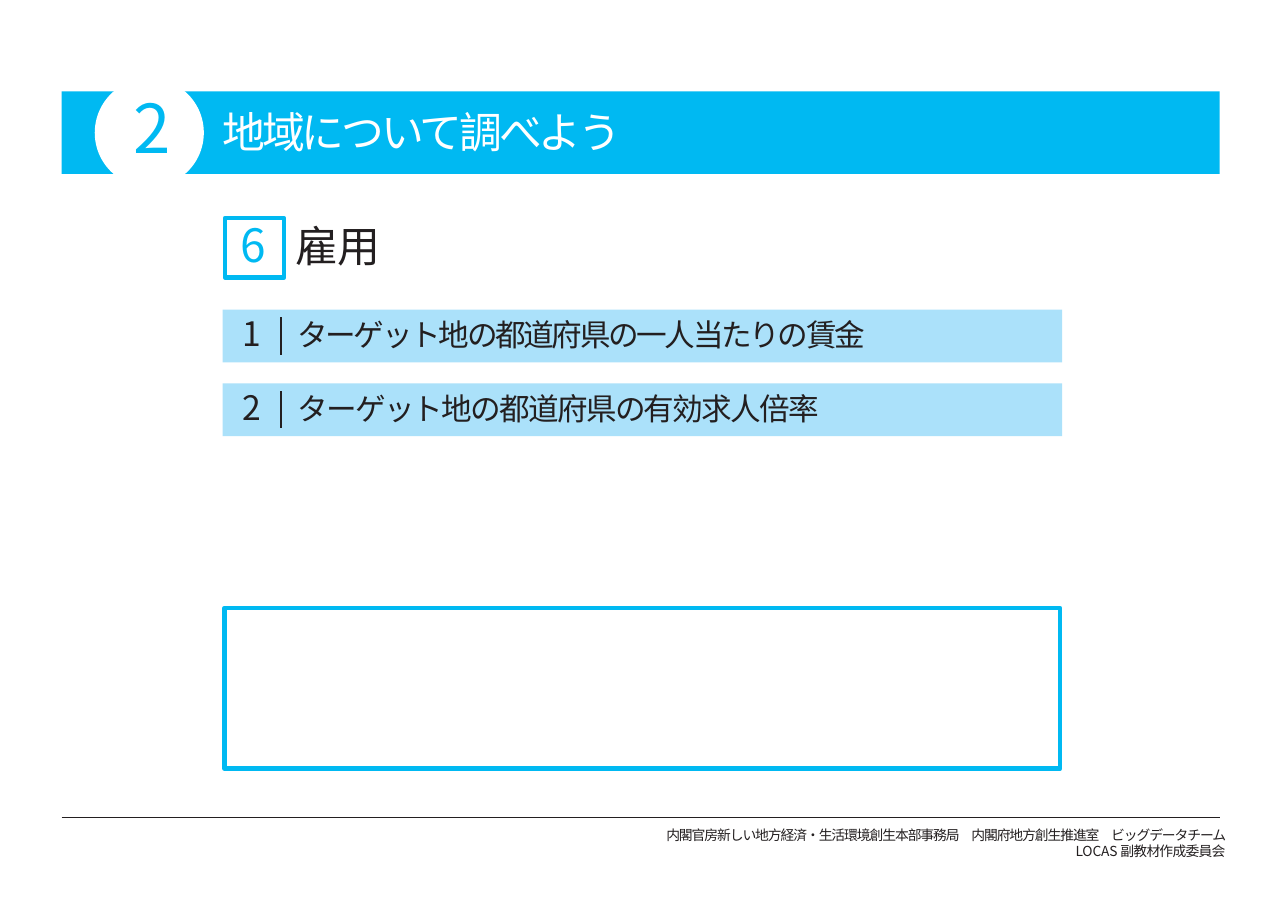
from dataclasses import dataclass

from lxml.etree import SubElement
from pptx import Presentation
from pptx.dml.color import RGBColor
from pptx.enum.shapes import MSO_CONNECTOR, MSO_SHAPE
from pptx.enum.text import MSO_ANCHOR, PP_ALIGN
from pptx.oxml.ns import qn
from pptx.util import Inches, Pt


@dataclass(frozen=True)
class Theme:
    """Colours, typeface and type sizes of the slide."""
    accent: str = "00B9F2"
    pale: str = "ABE1FA"
    ink: str = "231F20"
    white: str = "FFFFFF"
    typeface: str = "Noto Sans CJK JP"
    chapter: float = 44
    badge: float = 30
    heading: float = 28
    item_number: float = 22
    item: float = 20
    credit: float = 9


THEME = Theme()


def add_block(slide, kind, box, fill=None, line=None, width=0):
    """Add a preset shape with an optional fill and outline."""
    shape = slide.shapes.add_shape(kind, *map(Inches, box))
    shape.shadow.inherit = False
    if fill:
        shape.fill.solid()
        shape.fill.fore_color.rgb = RGBColor.from_string(fill)
    else:
        shape.fill.background()
    if line:
        shape.line.color.rgb = RGBColor.from_string(line)
        shape.line.width = Pt(width)
    else:
        shape.line.fill.background()
    return shape


def add_rule(slide, start, end, width):
    """Add a thin straight line in the ink colour."""
    rule = slide.shapes.add_connector(MSO_CONNECTOR.STRAIGHT, *map(Inches, start + end))
    rule.line.color.rgb = RGBColor.from_string(THEME.ink)
    rule.line.width = Pt(width)
    SubElement(rule._element.spPr, qn("a:effectLst"))


def prepare_frame(shape, top=0):
    """Set wrapping, margins and top anchoring of a shape's text."""
    frame = shape.text_frame
    frame.word_wrap = True
    frame.vertical_anchor = MSO_ANCHOR.TOP
    frame.margin_left = frame.margin_right = frame.margin_bottom = 0
    frame.margin_top = Inches(top)
    return frame


def add_text_box(slide, box, top=0):
    """Add a text box and return its text frame."""
    return prepare_frame(slide.shapes.add_textbox(*map(Inches, box)), top)


def write(paragraph, runs, indent=0.01, before=0, leading=None, tab=None, align=PP_ALIGN.LEFT):
    """Fill a paragraph with runs given as text, size, colour and tracking."""
    paragraph.alignment = align
    paragraph.space_before = Pt(before)
    if leading:
        paragraph.line_spacing = Pt(leading)
    properties = paragraph._p.get_or_add_pPr()
    properties.set("marL", str(Inches(indent)))
    properties.set("indent", "0")
    if tab:
        tabs = SubElement(properties, qn("a:tabLst"))
        SubElement(tabs, qn("a:tab"), pos=str(Inches(tab)), algn="l")
    paragraph.font.name = THEME.typeface
    for text, size, colour, tracking in runs:
        run = paragraph.add_run()
        run.text = text
        run.font.size = Pt(size)
        run.font.color.rgb = RGBColor.from_string(colour)
        character = run._r.get_or_add_rPr()
        character.set("spc", str(round(tracking * 100)))
        SubElement(character, qn("a:ea"), typeface=THEME.typeface)


def add_chapter_banner(slide, box, number, title):
    """Draw the banner with its numbered circle and chapter title."""
    left, top, _, _ = box
    add_block(slide, MSO_SHAPE.RECTANGLE, box, fill=THEME.accent)
    add_block(slide, MSO_SHAPE.OVAL, (left + 0.3, top - 0.12, 0.99, 0.99), fill=THEME.white)
    frame = add_text_box(slide, (left + 0.62, top - 0.06, 0.39, 0.8), 0.01)
    write(frame.paragraphs[0], [(number, THEME.chapter, THEME.accent, 0)], 0.03, 1)
    frame = add_text_box(slide, (left + 1.45, top + 0.12, 3.7, 0.49), 0.01)
    write(frame.paragraphs[0], [(title, THEME.heading, THEME.white, -2)], before=1)


def add_section_heading(slide, box, number, title):
    """Draw the outlined section number followed by its title."""
    left, top, width, height = box
    add_block(slide, MSO_SHAPE.RECTANGLE, (left, top, 0.54, 0.54), line=THEME.accent, width=2.64)
    frame = add_text_box(slide, (left + 0.13, top, width, height))
    write(frame.paragraphs[0], [
        (number + "\t", THEME.badge, THEME.accent, -0.5),
        (title, THEME.heading, THEME.ink, -0.4),
    ], leading=35, tab=0.59)


def add_item(slide, box, number, text, tracking):
    """Draw one numbered bar with its divider."""
    left, top, _, _ = box
    bar = add_block(slide, MSO_SHAPE.RECTANGLE, box, fill=THEME.pale)
    write(prepare_frame(bar, 0.03).paragraphs[0], [
        (f"{number}\t", THEME.item_number, THEME.ink, -0.5),
        (text, THEME.item, THEME.ink, tracking),
    ], indent=0.18, before=2.1, tab=0.73)
    divider = left + 0.53
    add_rule(slide, (divider, top + 0.07), (divider, top + 0.41), 0.75)


def add_footer(slide, box, credits):
    """Draw the footer rule and the right-aligned credit lines."""
    left, top, width, height = box
    add_rule(slide, (left, top), (left + width, top), 0.5)
    frame = add_text_box(slide, (left + 5.26, top + 0.09, 5.3, height))
    for index, runs in enumerate(credits):
        paragraph = frame.add_paragraph() if index else frame.paragraphs[0]
        write(paragraph, [(text, THEME.credit, THEME.ink, tracking) for text, tracking in runs],
              leading=10.6, align=PP_ALIGN.RIGHT)


def main():
    """Build the slide and save it."""
    presentation = Presentation()
    presentation.slide_width, presentation.slide_height = Inches(11.69), Inches(8.27)
    slide = presentation.slides.add_slide(presentation.slide_layouts[6])
    add_chapter_banner(slide, (0.56, 0.83, 10.51, 0.75), "2", "地域について調べよう")
    add_section_heading(slide, (2.04, 1.98, 1.38, 0.49), "6", "雇用")
    items = [
        ("ターゲット地の都道府県の一人当たりの賃金", -1.6),
        ("ターゲット地の都道府県の有効求人倍率", -1.2),
    ]
    for index, (text, tracking) in enumerate(items):
        add_item(slide, (2.02, 2.81 + 0.67 * index, 7.62, 0.48), index + 1, text, tracking)
    add_block(slide, MSO_SHAPE.RECTANGLE, (2.04, 5.52, 7.58, 1.46), line=THEME.accent, width=3)
    add_footer(slide, (0.56, 7.42, 10.51, 0.29), [
        [("内閣官房新しい地方経済・生活環境創生本部事務局　内閣府地方創生推進室　ビッグデータチーム", -0.7)],
        [("LOCAS ", -0.1), ("副教材作成委員会", -0.5)],
    ])
    presentation.save("out.pptx")


if __name__ == "__main__":
    main()
